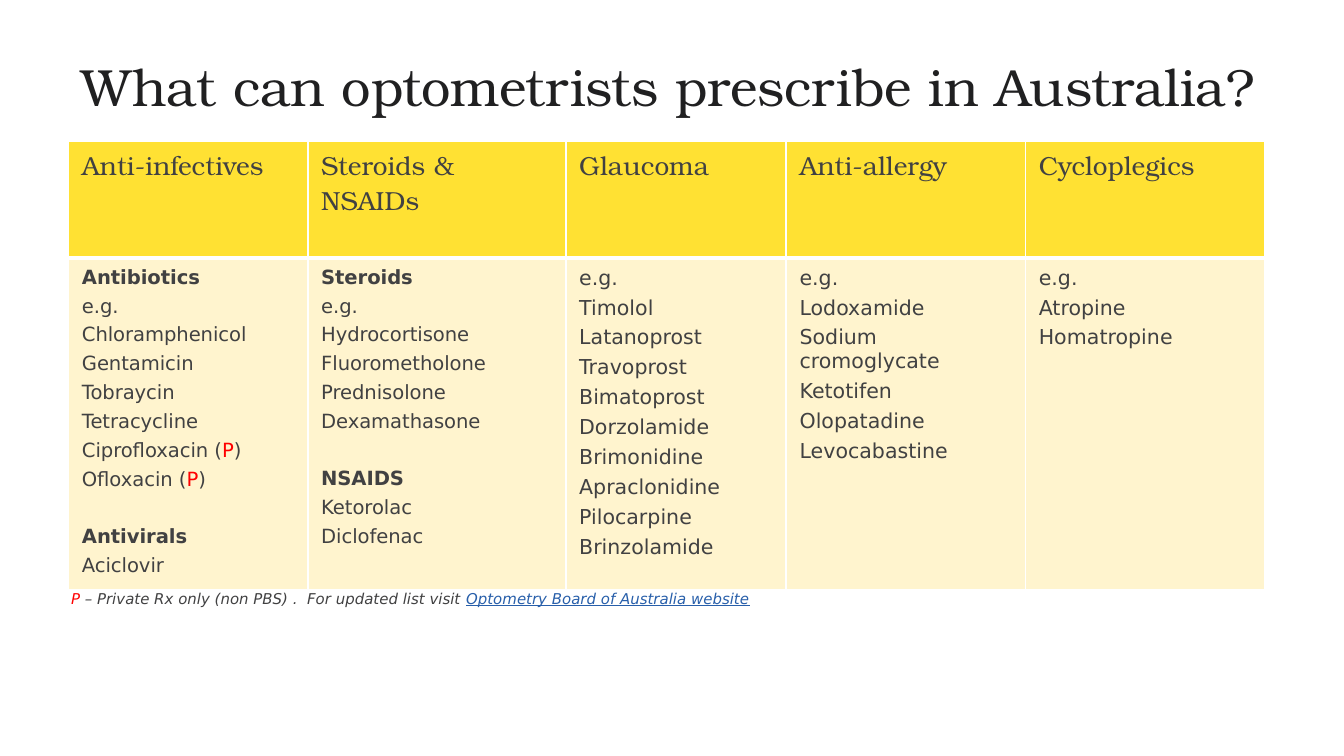
from lxml.etree import SubElement
from pptx import Presentation
from pptx.dml.color import RGBColor
from pptx.enum.text import MSO_ANCHOR, PP_ALIGN
from pptx.oxml.ns import qn
from pptx.util import Inches, Pt

COLORS = {"title": "202021", "text": "414142", "private": "FF0000",
          "link": "285FAA", "header": "FFE133", "body": "FFF4CE",
          "border": "FFFFFF"}
SERIF, SANS = "TeX Gyre Bonum", "DejaVu Sans"
TITLE = "What can optometrists prescribe in Australia?"
DRUGS = [
    ("Anti-infectives", 1.78, 10.5, [
        ("Antibiotics", ["e.g.", "Chloramphenicol", "Gentamicin", "Tobraycin",
                         "Tetracycline", "Ciprofloxacin (P)", "Ofloxacin (P)"]),
        ("Antivirals", ["Aciclovir"])]),
    ("Steroids & NSAIDs", 1.92, 10.5, [
        ("Steroids", ["e.g.", "Hydrocortisone", "Fluorometholone",
                      "Prednisolone", "Dexamathasone"]),
        ("NSAIDS", ["Ketorolac", "Diclofenac"])]),
    ("Glaucoma", 1.64, 11, [
        (None, ["e.g.", "Timolol", "Latanoprost", "Travoprost", "Bimatoprost",
                "Dorzolamide", "Brimonidine", "Apraclonidine", "Pilocarpine",
                "Brinzolamide"])]),
    ("Anti-allergy", 1.78, 11, [
        (None, ["e.g.", "Lodoxamide", "Sodium cromoglycate", "Ketotifen",
                "Olopatadine", "Levocabastine"])]),
    ("Cycloplegics", 1.78, 11, [(None, ["e.g.", "Atropine", "Homatropine"])]),
]
FOOTNOTE = [("P ", "private"),
            ("– Private Rx only (non PBS) .  For updated list visit ", "text"),
            ("Optometry Board of Australia website", "link")]
ROW_HEIGHTS = [0.87, 2.47]
LINE_GAP, GROUP_GAP = 3.2, 18.6


def style(font, name, size, color, bold=False):
    font.name, font.size, font.bold = name, Pt(size), bold
    font.color.rgb = RGBColor.from_string(COLORS[color])


def format_cell(cell, color, bottom):
    tcPr = cell._tc.get_or_add_tcPr()
    for side, width in (("L", 1), ("R", 1), ("T", 1), ("B", bottom)):
        ln = SubElement(tcPr, qn("a:ln" + side), w=str(Pt(width)))
        fill = SubElement(ln, qn("a:solidFill"))
        SubElement(fill, qn("a:srgbClr"), val=COLORS["border"])
    cell.fill.solid()
    cell.fill.fore_color.rgb = RGBColor.from_string(COLORS[color])


def add_line(p, text, size, bold):
    before, mark, after = text.partition("(P)")
    parts = [(before + "(", "text"), ("P", "private"), (")" + after, "text")]
    for part, color in parts if mark else [(text, "text")]:
        r = p.add_run()
        r.text = part
        style(r.font, SANS, size, color, bold)


def fill_drugs(tf, groups, size):
    p = tf.paragraphs[0]
    for g, (heading, names) in enumerate(groups):
        lines = ([heading] if heading else []) + names
        for i, line in enumerate(lines):
            if g or i:
                p = tf.add_paragraph()
                p.space_before = Pt(LINE_GAP if i else GROUP_GAP)
            add_line(p, line, size, line == heading)


prs = Presentation()
prs.slide_width, prs.slide_height = Inches(10), Inches(10 * 9 / 16)
s = prs.slides.add_slide(prs.slide_layouts[5])

title = s.shapes.title
title.left, title.top = Inches(0.51), Inches(0.34)
title.width, title.height = Inches(8.98), Inches(0.59)
tf = title.text_frame
tf.text = TITLE
tf.vertical_anchor = MSO_ANCHOR.MIDDLE
p = tf.paragraphs[0]
p.alignment = PP_ALIGN.LEFT
style(p.runs[0].font, SERIF, 28, "title")

width = sum(column[1] for column in DRUGS)
table = s.shapes.add_table(2, len(DRUGS), Inches(0.51), Inches(1.05),
                           Inches(width), Inches(sum(ROW_HEIGHTS))).table
for row, height in zip(table.rows, ROW_HEIGHTS):
    row.height = Inches(height)
for c, (name, col_width, size, groups) in enumerate(DRUGS):
    table.columns[c].width = Inches(col_width)
    header, body = table.cell(0, c), table.cell(1, c)
    format_cell(header, "header", 3)
    header.text_frame.text = name
    style(header.text_frame.paragraphs[0].runs[0].font, SERIF, 14, "text")
    format_cell(body, "body", 1)
    body.margin_top = Inches(0.06)
    fill_drugs(body.text_frame, groups, size)

note = s.shapes.add_textbox(Inches(0.43), Inches(4.34), Inches(9.21), Inches(0.24))
tf = note.text_frame
tf.word_wrap = True
p = tf.paragraphs[0]
for text, color in FOOTNOTE:
    r = p.add_run()
    r.text = text
    style(r.font, SANS, 8, color)
    r.font.italic = True
    r.font.underline = color == "link"

prs.save("out.pptx")
